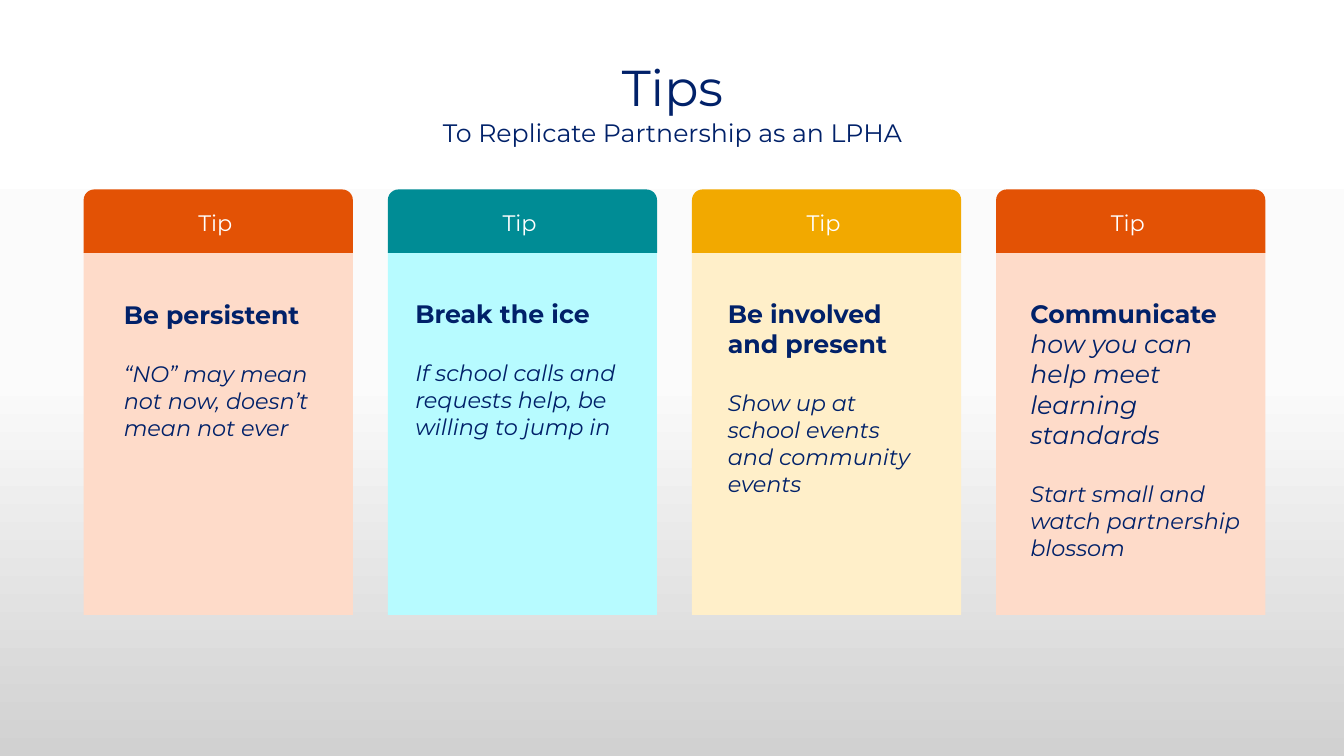
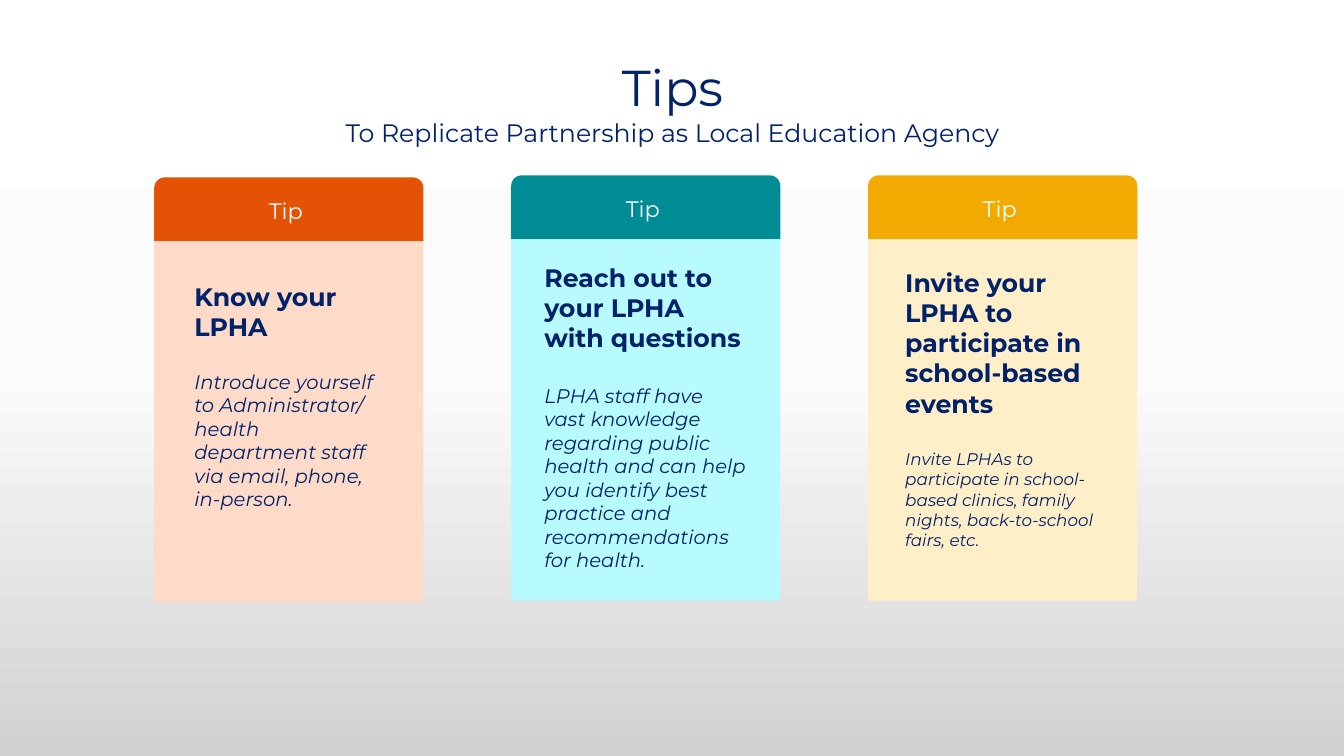
"""Builds two slides of tip cards."""
from copy import deepcopy

from pptx import Presentation
from pptx.dml.color import RGBColor
from pptx.enum import shapes, text
from pptx.oxml.ns import qn
from pptx.util import Inches, Pt

NAVY = RGBColor(0x01, 0x21, 0x69)
WHITE = RGBColor(0xFF, 0xFF, 0xFF)
PALE = RGBColor(0xFB, 0xFB, 0xFB)
GREY = RGBColor(0xD1, 0xD1, 0xD1)
ORANGE = (RGBColor(0xE3, 0x52, 0x05), RGBColor(0xFE, 0xDB, 0xC9))
TEAL = (RGBColor(0x00, 0x8C, 0x95), RGBColor(0xB7, 0xFB, 0xFF))
GOLD = (RGBColor(0xF2, 0xA9, 0x00), RGBColor(0xFF, 0xEF, 0xC9))
FONT = "Montserrat"
WIDE = 2.67
HEAD = 0.63
BODY = 3.6


def write(para, words, size=18, color=NAVY, bold=False, italic=False,
          align=None, gap=0, lead=None):
    """Put formatted text into a paragraph."""
    para.alignment = align
    para.space_before = Pt(gap)
    para.line_spacing = lead
    run = para.add_run()
    run.text = words
    font = run.font
    font.name, font.size = FONT, Pt(size)
    font.bold, font.italic = bold, italic
    font.color.rgb = color


def bold(words):
    """Describe a card heading."""
    return words, dict(bold=True)


def note(words, size=16, gap=0):
    """Describe a slanted card line."""
    return words, dict(size=size, italic=True, gap=gap)


class Deck:
    """Holds the shared style and the current slide."""

    def __init__(self):
        """Set the slide size and the shared background."""
        self.file = Presentation()
        self.file.slide_width = Inches(13.33)
        self.file.slide_height = Inches(7.5)
        master = self.file.slide_master
        fill = master.background.fill
        fill.gradient()
        fill.gradient_angle = 270
        stops = master.element.find(".//" + qn("a:gsLst"))
        stops.insert(1, deepcopy(stops[0]))
        tones = ((0, WHITE), (0.5, PALE), (1, GREY))
        for stop, (place, tone) in zip(fill.gradient_stops, tones):
            stop.position = place
            stop.color.rgb = tone

    def start(self, topic):
        """Open a slide with its title and subtitle."""
        self.slide = self.file.slides.add_slide(self.file.slide_layouts[6])
        style = dict(align=text.PP_ALIGN.CENTER, lead=0.9)
        self.label(0.92, 0.41, 11.5, 0.97, [("Tips", dict(size=36, **style))],
                   anchor=text.MSO_ANCHOR.MIDDLE)
        self.label(1.67, 1.15, 10, 0.48, [(topic, dict(gap=10, **style))])

    def label(self, left, top, wide, high, lines, anchor=text.MSO_ANCHOR.TOP):
        """Add a wrapped text box."""
        box = self.slide.shapes.add_textbox(
            Inches(left), Inches(top), Inches(wide), Inches(high))
        frame = box.text_frame
        frame.word_wrap = True
        frame.vertical_anchor = anchor
        for i, (words, style) in enumerate(lines):
            para = frame.add_paragraph() if i else frame.paragraphs[0]
            write(para, words, **style)

    def block(self, kind, left, top, high, color):
        """Add a plain filled shape of card width."""
        shape = self.slide.shapes.add_shape(
            kind, Inches(left), Inches(top), Inches(WIDE), Inches(high))
        shape.shadow.inherit = False
        shape.fill.solid()
        shape.fill.fore_color.rgb = color
        shape.line.fill.background()
        return shape

    def card(self, left, top, hue, box, lines):
        """Add a tip card with a rounded head."""
        kind = shapes.MSO_SHAPE
        dark, light = hue
        self.block(kind.RECTANGLE, left, top + HEAD - 0.01, BODY, light)
        head = self.block(kind.ROUND_2_SAME_RECTANGLE, left, top, HEAD, dark)
        head.text_frame.vertical_anchor = text.MSO_ANCHOR.MIDDLE
        write(head.text_frame.paragraphs[0], "Tip ", size=16, color=WHITE,
              align=text.PP_ALIGN.CENTER)
        self.label(*box, lines)

    def cards(self, first, step, items):
        """Add a row of evenly spaced cards."""
        for i, item in enumerate(items):
            self.card(first + i * step, *item)


def main():
    """Build and save the slides."""
    deck = Deck()
    deck.start("To Replicate Partnership as an LPHA")
    deck.cards(0.83, 9.05 / 3, [
        (1.88, ORANGE, (1.13, 2.92, 2.07, 1.51), [
            bold("Be persistent"),
            note("“NO” may mean not now, doesn’t mean not ever", gap=22)]),
        (1.88, TEAL, (4.02, 2.91, 2.21, 1.82), [
            bold("Break the ice"),
            note("If school calls and requests help, be willing to jump in",
                 gap=22)]),
        (1.88, GOLD, (7.12, 2.91, 2.15, 2.39), [
            bold("Be involved and present"),
            note("Show up at school events and community events", gap=22)]),
        (1.88, ORANGE, (10.12, 2.91, 2.38, 2.73), [
            bold("Communicate"),
            note("how you can help meet learning standards", size=18),
            note("Start small and watch partnership blossom", gap=22)]),
    ])
    deck.start("To Replicate Partnership as Local Education Agency")
    deck.cards(1.53, 3.54, [
        (1.76, ORANGE, (1.83, 2.74, 2.07, 2.39), [
            bold("Know your LPHA"),
            note("Introduce yourself to Administrator/", size=14, gap=20),
            note("health department staff via email, phone, in-person.",
                 size=14)]),
        (1.74, TEAL, (5.3, 2.55, 2.21, 3.8), [
            bold("Reach out to your LPHA with questions"),
            note("LPHA staff have vast knowledge regarding public health and "
                 "can help you identify best practice and recommendations "
                 "for health.", size=14, gap=22)]),
        (1.74, GOLD, (8.88, 2.6, 2.15, 2.93), [
            bold("Invite your LPHA to participate in school-based events"),
            note("Invite LPHAs to participate in school-based clinics, family "
                 "nights, back-to-school fairs, etc.", size=12, gap=22)]),
    ])
    deck.file.save("out.pptx")


if __name__ == "__main__":
    main()
